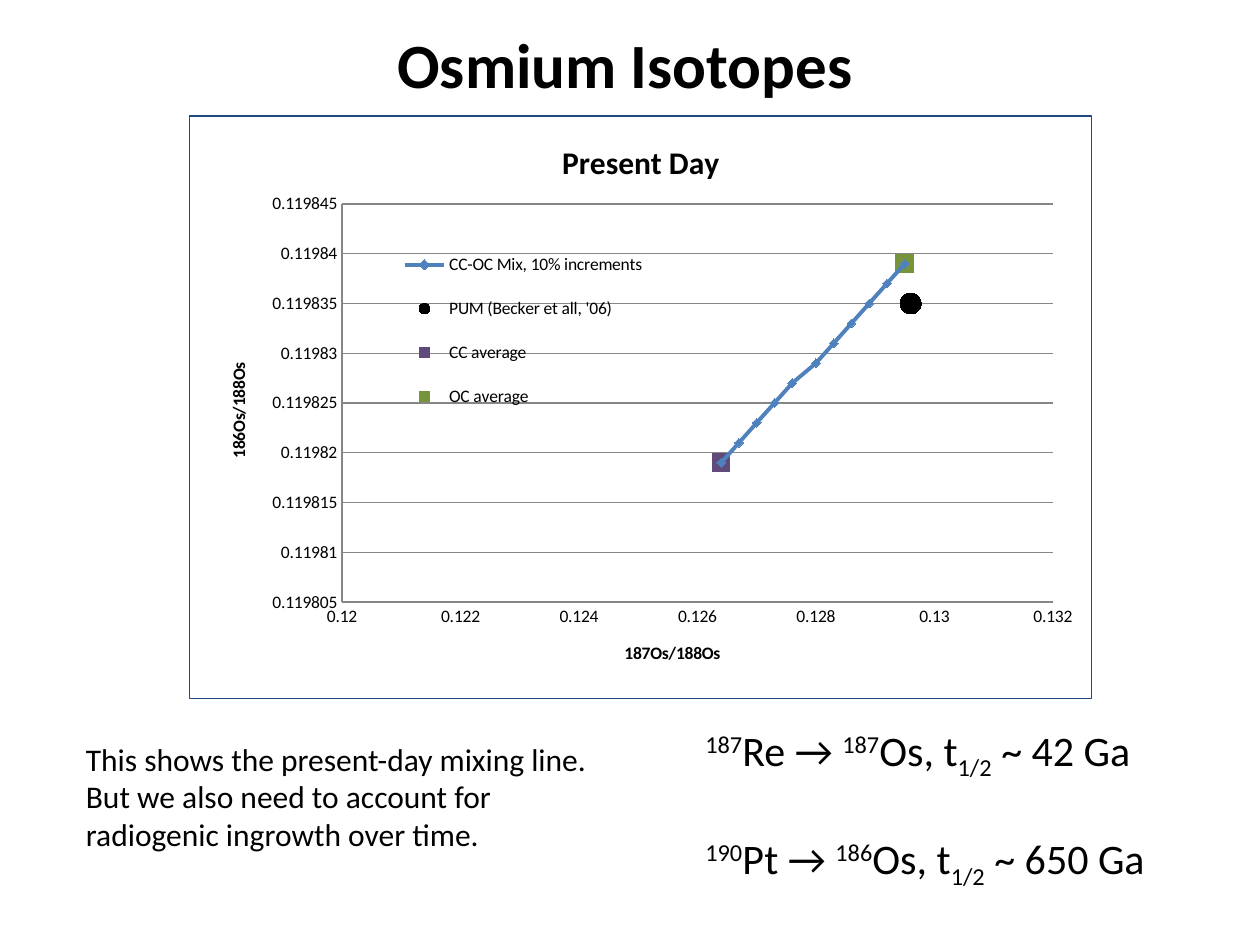
from pptx import Presentation
from pptx.chart.data import XyChartData
from pptx.dml.color import RGBColor
from pptx.enum.chart import XL_CHART_TYPE, XL_LEGEND_POSITION, XL_MARKER_STYLE, XL_TICK_MARK
from pptx.enum.text import MSO_ANCHOR, PP_ALIGN
from pptx.oxml import parse_xml
from pptx.oxml.ns import nsdecls
from pptx.util import Inches, Pt

BLACK = RGBColor(0x00, 0x00, 0x00)
BLUE = RGBColor(0x4F, 0x81, 0xBD)
PURPLE = RGBColor(0x60, 0x4A, 0x7B)
GREEN = RGBColor(0x77, 0x93, 0x3C)
GRAY = RGBColor(0x86, 0x86, 0x86)
FONT = "Calibri"

TITLE = "Osmium Isotopes"
NOTE = ("This shows the present-day mixing line.  But we also need to "
        "account for radiogenic ingrowth over time.")
SUPER, SUB = 30, -25
DECAYS = [("187", "Re", "187", "42"), ("190", "Pt", "186", "650")]

CHART_TITLE = "Present Day"
CRUST = (0.1264, 0.119819)
OCEAN = (0.1295, 0.119839)
MANTLE = (0.1296, 0.119835)
STEPS = 10
MIX = [tuple(a + (b - a) * step / STEPS for a, b in zip(CRUST, OCEAN))
       for step in range(STEPS + 1)]
# name, points, marker style, marker size, colour, line width
SERIES = [
    ("CC-OC Mix, 10% increments", MIX, XL_MARKER_STYLE.DIAMOND, 5, BLUE, 2.25),
    ("PUM (Becker et all, '06)", [MANTLE], XL_MARKER_STYLE.CIRCLE, 12, BLACK, None),
    ("CC average", [CRUST], XL_MARKER_STYLE.SQUARE, 10, PURPLE, None),
    ("OC average", [OCEAN], XL_MARKER_STYLE.SQUARE, 10, GREEN, None),
]
# title, minimum, maximum, major unit
X_AXIS = ("187Os/188Os", 0.12, 0.132, 0.002)
Y_AXIS = ("186Os/188Os", 0.119805, 0.119845, 0.000005)
PLOT_SHARES = (0.169, 0.151, 0.788, 0.684)
LEGEND_SHARES = (0.205, 0.197, 0.33, 0.343)


def add_box(page, place, wrap=True):
    box = page.shapes.add_textbox(*map(Inches, place))
    box.text_frame.word_wrap = wrap
    return box.text_frame


def add_span(para, text, size, bold=False, shift=0):
    """Add one run; shift is the baseline offset in percent."""
    span = para.add_run()
    span.text = text
    span.font.name = FONT
    span.font.size = Pt(size)
    span.font.bold = bold
    span.font.color.rgb = BLACK
    if shift:
        span._r.get_or_add_rPr().set("baseline", str(shift * 1000))


def manual_layout(shares, inner=False):
    target = '<c:layoutTarget val="inner"/>' if inner else ""
    modes = '<c:xMode val="edge"/><c:yMode val="edge"/>'
    sizes = "".join(f'<c:{key} val="{share}"/>' for key, share in zip("xywh", shares))
    return parse_xml(f'<c:layout {nsdecls("c")}><c:manualLayout>{target}{modes}{sizes}'
                     '</c:manualLayout></c:layout>')


def style_axis(axis, title, low, high, unit):
    axis.minimum_scale, axis.maximum_scale, axis.major_unit = low, high, unit
    axis.major_tick_mark = axis.minor_tick_mark = XL_TICK_MARK.NONE
    axis.tick_labels.number_format = "General"
    axis.tick_labels.number_format_is_linked = False
    axis.format.line.color.rgb = GRAY
    add_span(axis.axis_title.text_frame.paragraphs[0], title, 10, bold=True)


def style_series(series, style, size, color, width):
    series.smooth = False
    if width:
        series.format.line.color.rgb = color
        series.format.line.width = Pt(width)
    else:
        series.format.line.fill.background()
    marker = series.marker
    marker.style, marker.size = style, size
    marker.format.fill.solid()
    marker.format.fill.fore_color.rgb = color
    marker.format.line.color.rgb = color


def add_mixing_chart(page, place):
    data = XyChartData()
    for name, points, *_ in SERIES:
        series = data.add_series(name)
        for x, y in points:
            series.add_data_point(round(x, 4), round(y, 6))
    chart = page.shapes.add_chart(
        XL_CHART_TYPE.XY_SCATTER_SMOOTH, *map(Inches, place), data).chart
    chart.font.name, chart.font.size = FONT, Pt(10)
    chart.font.color.rgb = BLACK
    chart.plots[0].vary_by_categories = False
    add_span(chart.chart_title.text_frame.paragraphs[0], CHART_TITLE, 18, bold=True)
    chart.chart_title.include_in_layout = False

    style_axis(chart.category_axis, *X_AXIS)
    style_axis(chart.value_axis, *Y_AXIS)
    chart.category_axis.has_major_gridlines = False
    chart.value_axis.has_major_gridlines = True
    chart.value_axis.major_gridlines.format.line.color.rgb = GRAY
    for series, (_, _, *look) in zip(chart.plots[0].series, SERIES):
        style_series(series, *look)

    chart.has_legend = True
    chart.legend.position = XL_LEGEND_POSITION.RIGHT
    chart.legend.include_in_layout = False
    root = chart.element
    for old in root.xpath("c:chart/c:plotArea/c:layout | c:chart/c:legend/c:layout"):
        old.getparent().remove(old)
    root.xpath("c:chart/c:plotArea")[0].insert(0, manual_layout(PLOT_SHARES, inner=True))
    root.xpath("c:chart/c:legend/c:legendPos")[0].addnext(manual_layout(LEGEND_SHARES))
    root.xpath("c:chart")[0].addnext(parse_xml(
        f'<c:spPr {nsdecls("c", "a")}>'
        '<a:solidFill><a:srgbClr val="FFFFFF"><a:alpha val="79000"/></a:srgbClr></a:solidFill>'
        '<a:ln w="9525"><a:solidFill><a:srgbClr val="1F497D"/></a:solidFill></a:ln>'
        '</c:spPr>'))


def main():
    deck = Presentation()
    deck.slide_width, deck.slide_height = Inches(10), Inches(7.5)
    page = deck.slides.add_slide(deck.slide_layouts[6])

    heading = add_box(page, (1.67, 0.11, 6.58, 0.78))
    heading.vertical_anchor = MSO_ANCHOR.MIDDLE
    heading.paragraphs[0].alignment = PP_ALIGN.CENTER
    add_span(heading.paragraphs[0], TITLE, 36, bold=True)

    note = add_box(page, (7 / 12, 5.82, 4.5, 1.01))
    add_span(note.paragraphs[0], NOTE, 18)

    decays = add_box(page, (5.5, 5.7, 3.87, 1.18), wrap=False)
    for index, (parent_mass, parent, child_mass, half_life) in enumerate(DECAYS):
        para = decays.add_paragraph() if index else decays.paragraphs[0]
        para.space_before = Pt(29 * index)
        for text, shift in [(parent_mass, SUPER), (f"{parent} → ", 0),
                            (child_mass, SUPER), ("Os, t", 0),
                            ("1/2", SUB), (f" ~ {half_life} Ga", 0)]:
            add_span(para, text, 24, shift=shift)

    add_mixing_chart(page, (1.5, 11 / 12, 7.17, 4.63))
    deck.save("out.pptx")


if __name__ == "__main__":
    main()
